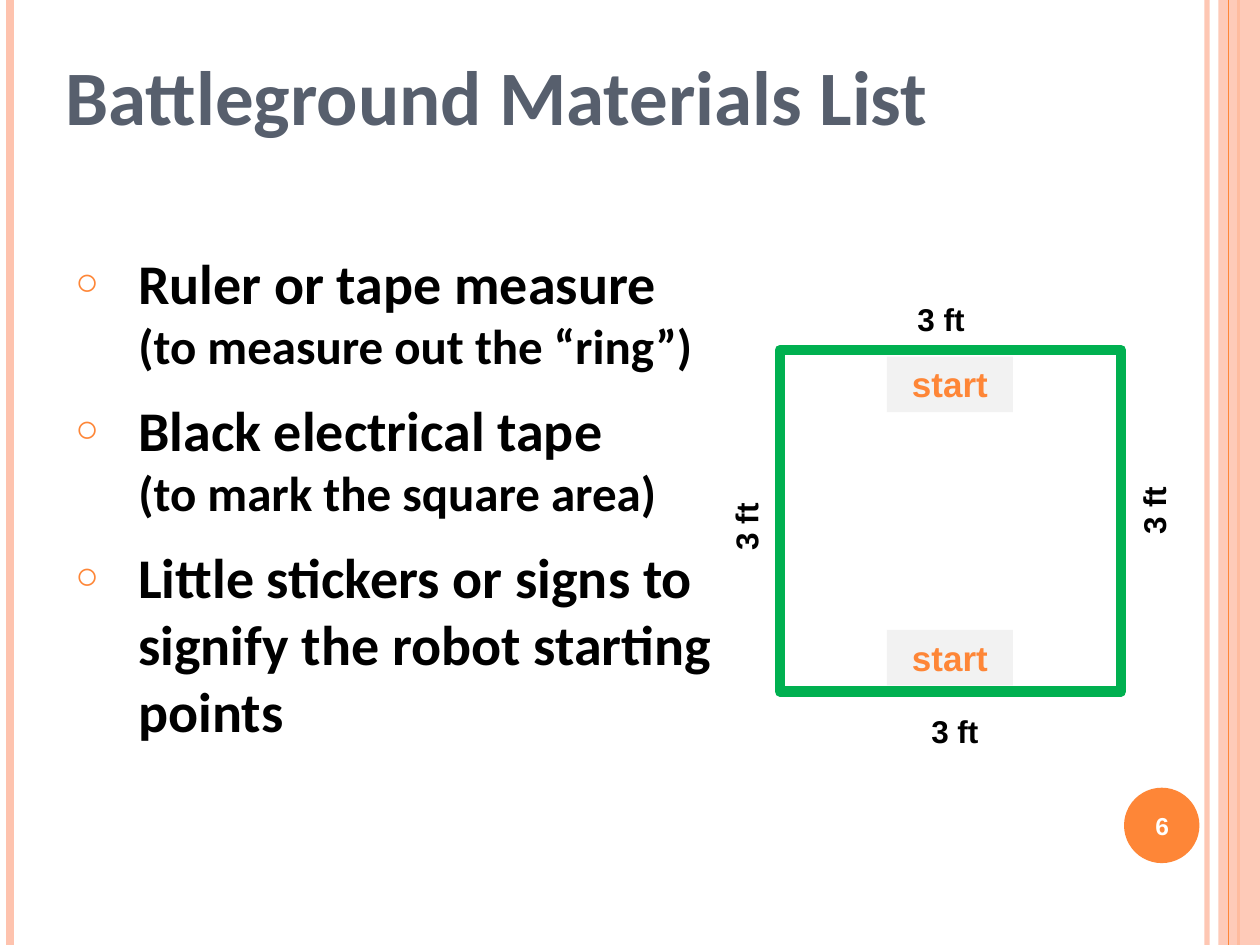
"""Builds the battleground materials slide with its measured ring diagram."""
from lxml.etree import SubElement
from pptx import Presentation
from pptx.dml.color import RGBColor
from pptx.enum.shapes import MSO_CONNECTOR, MSO_SHAPE
from pptx.enum.text import MSO_ANCHOR, PP_ALIGN
from pptx.oxml.ns import qn
from pptx.util import Cm, Pt

PEACH = RGBColor(0xFE, 0xC3, 0xAE)
ORANGE = RGBColor(0xFE, 0x86, 0x37)
SLATE = RGBColor(0x57, 0x5F, 0x6D)
GREEN = RGBColor(0x00, 0xB0, 0x50)
PALE = RGBColor(0xF2, 0xF2, 0xF2)
BLACK = RGBColor(0x00, 0x00, 0x00)
WHITE = RGBColor(0xFF, 0xFF, 0xFF)
WIDTH, HEIGHT = 25.4, 19.05


class SlideBuilder:
    heading_font = "Calibri"
    label_font = "Arial"

    def __init__(self, page):
        self.page = page

    def set_opacity(self, element, percent):
        color = next(element.iter(qn("a:srgbClr")))
        SubElement(color, qn("a:alpha"), val=str(percent * 1000))

    def style(self, span, font, size, color):
        span.font.name = font
        span.font.size = Pt(size)
        span.font.bold = True
        span.font.color.rgb = color

    def vertical_line(self, x, color, weight, opacity=100):
        line = self.page.shapes.add_connector(MSO_CONNECTOR.STRAIGHT, Cm(x), Cm(0), Cm(x), Cm(HEIGHT))
        line.line.color.rgb = color
        line.line.width = Pt(weight)
        SubElement(line._element.spPr, qn("a:effectLst"))
        if opacity < 100:
            self.set_opacity(line._element.spPr, opacity)

    def shape(self, kind, left, top, width, height, fill=None, outline=None, weight=1, opacity=100):
        shape = self.page.shapes.add_shape(kind, Cm(left), Cm(top), Cm(width), Cm(height))
        shape.shadow.inherit = False
        if fill is None:
            shape.fill.background()
        else:
            shape.fill.solid()
            shape.fill.fore_color.rgb = fill
        if outline is None:
            shape.line.fill.background()
        else:
            shape.line.color.rgb = outline
            shape.line.width = Pt(weight)
        if opacity < 100:
            self.set_opacity(shape._element.spPr, opacity)
        return shape

    def fill_text(self, box, text, font, size, color, align, anchor):
        frame = box.text_frame
        frame.word_wrap = True
        frame.vertical_anchor = anchor
        frame.text = text
        para = frame.paragraphs[0]
        para.alignment = align
        self.style(para.runs[0], font, size, color)

    def text(self, text, left, top, width, height, font=label_font, size=18, color=BLACK,
             align=PP_ALIGN.CENTER, anchor=MSO_ANCHOR.TOP, rotation=0):
        box = self.page.shapes.add_textbox(Cm(left), Cm(top), Cm(width), Cm(height))
        box.rotation = rotation
        self.fill_text(box, text, font, size, color, align, anchor)

    def sign(self, text, left, top):
        box = self.shape(MSO_SHAPE.RECTANGLE, left, top, 2.54, 1.12, fill=PALE)
        self.fill_text(box, text, self.label_font, 20, ORANGE, PP_ALIGN.CENTER, MSO_ANCHOR.TOP)

    def bullets(self, items, left, top, width, height):
        box = self.page.shapes.add_textbox(Cm(left), Cm(top), Cm(width), Cm(height))
        frame = box.text_frame
        frame.word_wrap = True
        frame.text = "\n".join(items)
        for para in frame.paragraphs:
            para.space_before = para.space_after = Pt(6)
            for span, size in zip(para.runs, (32, 28)):
                self.style(span, self.heading_font, size, BLACK)
            properties = para._p.get_or_add_pPr()
            properties.set("marL", str(Cm(1.27)))
            properties.set("indent", str(-Cm(1.27)))
            color = SubElement(properties, qn("a:buClr"))
            SubElement(color, qn("a:srgbClr"), val=str(ORANGE))
            SubElement(properties, qn("a:buSzPct"), val="70000")
            SubElement(properties, qn("a:buFont"), typeface=self.label_font)
            SubElement(properties, qn("a:buChar"), char="○")


def main():
    deck = Presentation()
    deck.slide_width, deck.slide_height = Cm(WIDTH), Cm(HEIGHT)
    builder = SlideBuilder(deck.slides.add_slide(deck.slide_layouts[6]))

    builder.vertical_line(24.33, PEACH, 3, opacity=93)
    builder.vertical_line(0.2, PEACH, 4.5)
    builder.vertical_line(24.97, ORANGE, 1.5)
    builder.shape(MSO_SHAPE.RECTANGLE, 24.56, 0, 0.84, HEIGHT, fill=PEACH, opacity=87)
    builder.vertical_line(24.77, ORANGE, 0.75)
    builder.shape(MSO_SHAPE.OVAL, 22.66, 15.88, 1.52, 1.52, fill=ORANGE)

    builder.bullets(
        ["Ruler or tape measure\v(to measure out the “ring”)",
         "Black electrical tape\v(to mark the square area)",
         "Little stickers or signs to signify the robot starting points"],
        1.27, 4.88, 13.34, 11.43)
    builder.text("6", 22.58, 15.93, 1.7, 1.45, size=14, color=WHITE, anchor=MSO_ANCHOR.MIDDLE)
    builder.text("Battleground Materials List", 1.07, 0.76, 23.22, 2.21, font=builder.heading_font,
                 size=44, color=SLATE, align=PP_ALIGN.LEFT, anchor=MSO_ANCHOR.BOTTOM)

    for top in (7.19, 12.7):
        builder.sign("start", 17.88, top)
    for left, top, rotation in ((17.6, 5.92, 0), (13.67, 10.11, 270), (21.89, 9.78, 270), (17.88, 14.22, 0)):
        builder.text("3 ft", left, top, 2.74, 1.02, rotation=rotation)
    builder.shape(MSO_SHAPE.RECTANGLE, 15.72, 7.06, 6.88, 6.88, outline=GREEN, weight=6)

    deck.save("out.pptx")


if __name__ == "__main__":
    main()
